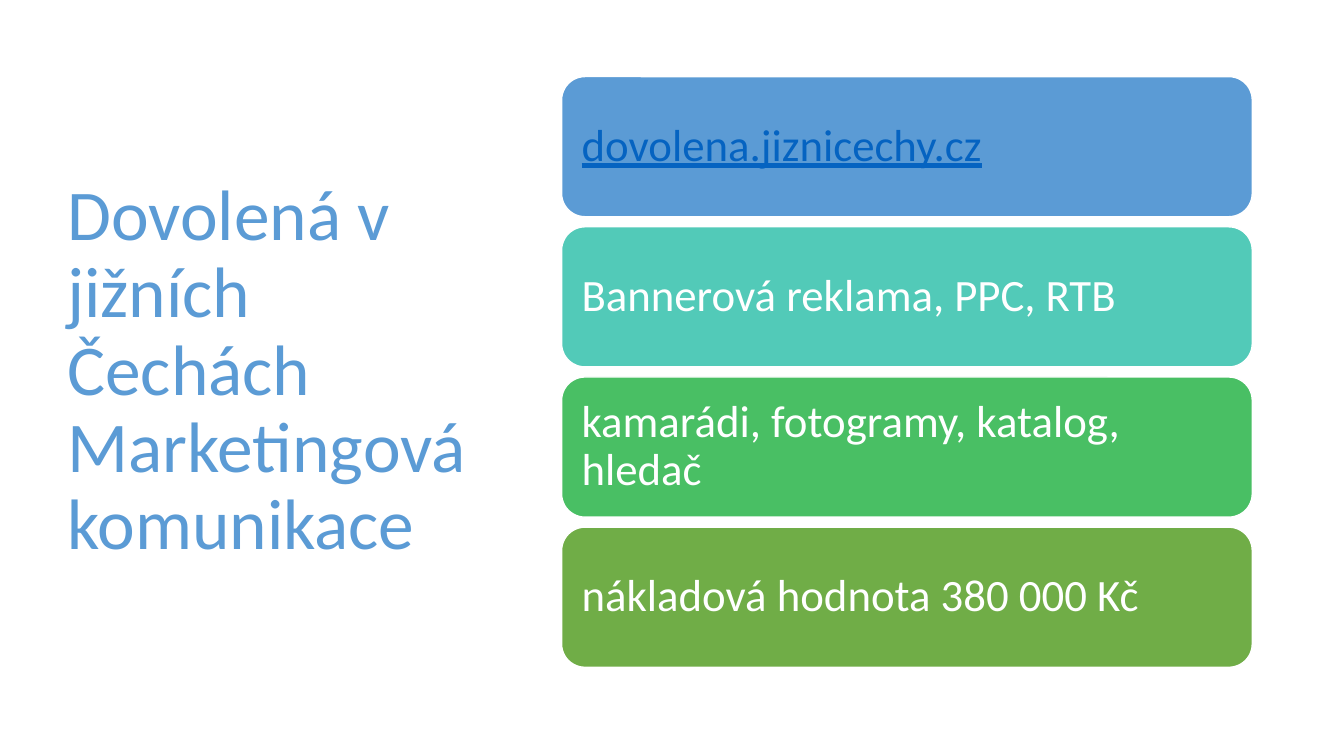
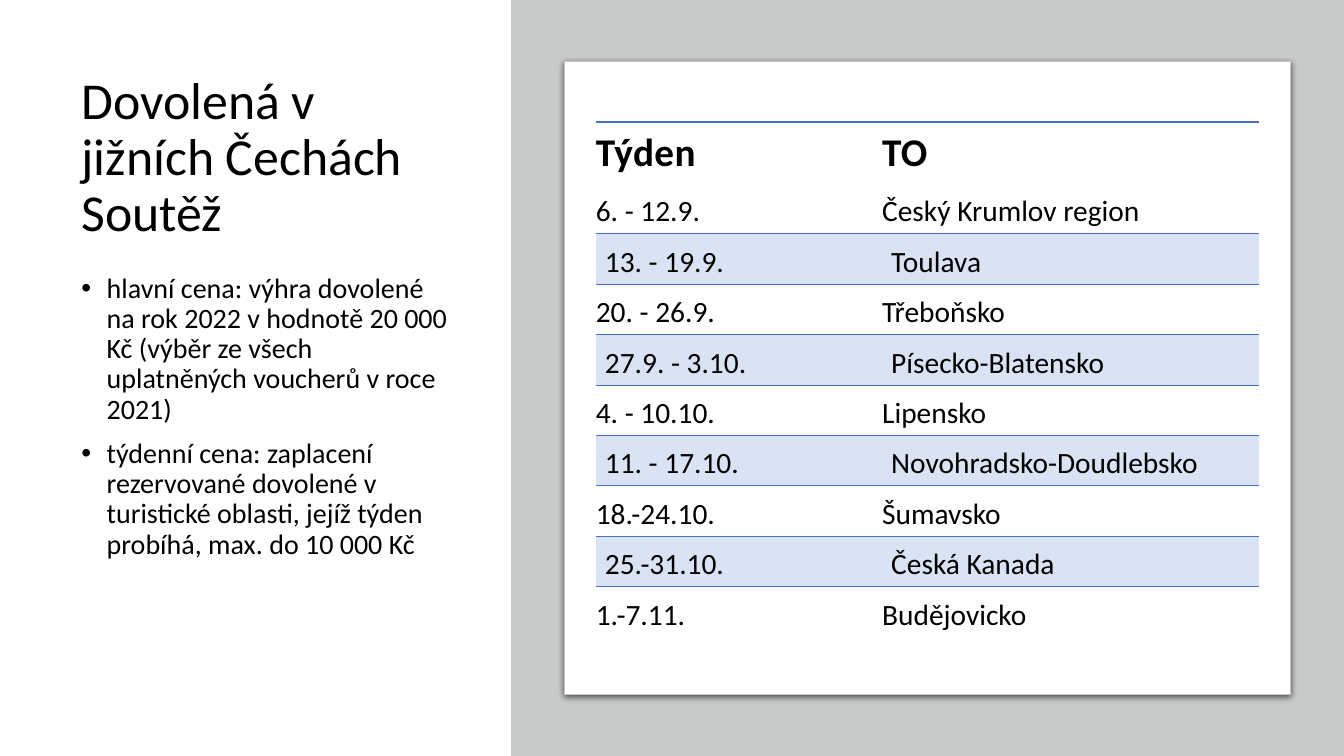
from lxml import etree
from pptx import Presentation
from pptx.dml.color import RGBColor
from pptx.enum.shapes import MSO_SHAPE as SHAPE
from pptx.enum.text import MSO_ANCHOR as ANCHOR, PP_ALIGN as ALIGN
from pptx.oxml.ns import qn
from pptx.util import Inches, Pt

FONT = "Calibri"
BLACK = RGBColor(0x00, 0x00, 0x00)
WHITE = RGBColor(0xFF, 0xFF, 0xFF)
BLUE = RGBColor(0x5B, 0x9B, 0xD5)
TEAL = RGBColor(0x52, 0xCA, 0xB8)
GREEN = RGBColor(0x49, 0xBF, 0x64)
OLIVE = RGBColor(0x70, 0xAD, 0x47)
LINK = RGBColor(0x05, 0x63, 0xC1)
GREY = RGBColor(0xC8, 0xCA, 0xCA)
BAND = RGBColor(0xDA, 0xE3, 0xF3)
RULE = RGBColor(0x44, 0x72, 0xC4)
NO_STYLE = "{2D5ABB26-0587-4C30-8999-92F81FD0307C}"


def write(paragraph, lines, size, color, spacing=0.9):
    paragraph.alignment = ALIGN.LEFT
    paragraph.line_spacing = spacing
    for i, line in enumerate(lines):
        if i:
            paragraph.add_line_break()
        run = paragraph.add_run()
        run.text = line
        run.font.name = FONT
        run.font.size = Pt(size)
        run.font.color.rgb = color
    return run


def add_title(slide, box, lines, size, color):
    frame = slide.shapes.add_textbox(*[Inches(v) for v in box]).text_frame
    frame.word_wrap = True
    frame.vertical_anchor = ANCHOR.MIDDLE
    write(frame.paragraphs[0], lines, size, color)


prs = Presentation()
prs.slide_width = Inches(13.33)
prs.slide_height = Inches(7.5)
blank = prs.slide_layouts[6]

marketing = prs.slides.add_slide(blank)
add_title(marketing, (0.57, 0.68, 4.16, 6.02),
          ["Dovolená v jižních Čechách", "Marketingová komunikace"], 51, BLUE)

channels = [
    ("dovolena.jiznicechy.cz", BLUE, LINK),
    ("Bannerová reklama, PPC, RTB", TEAL, WHITE),
    ("kamarádi, fotogramy, katalog, hledač", GREEN, WHITE),
    ("nákladová hodnota 380 000 Kč", OLIVE, WHITE),
]
for i, (text, fill, color) in enumerate(channels):
    card = marketing.shapes.add_shape(
        SHAPE.ROUNDED_RECTANGLE, Inches(5.57), Inches(0.76 + 1.49 * i), Inches(6.85), Inches(1.39))
    card.shadow.inherit = False
    card.fill.solid()
    card.fill.fore_color.rgb = fill
    card.line.color.rgb = WHITE
    card.line.width = Pt(1)
    frame = card.text_frame
    frame.word_wrap = True
    frame.vertical_anchor = ANCHOR.MIDDLE
    frame.margin_left = frame.margin_right = Inches(0.13)
    run = write(frame.paragraphs[0], [text], 32, color)
    if color == LINK:
        run.font.underline = True

contest = prs.slides.add_slide(blank)
add_title(contest, (0.71, 0.69, 3.83, 1.77),
          ["Dovolená v jižních Čechách", "Soutěž"], 37, BLACK)

prizes = [
    "hlavní cena: výhra dovolené na rok 2022 v hodnotě 20 000 Kč "
    "(výběr ze všech uplatněných voucherů v roce 2021)",
    "týdenní cena: zaplacení rezervované dovolené v turistické oblasti, "
    "jejíž týden probíhá, max. do 10 000 Kč",
]
frame = contest.shapes.add_textbox(Inches(0.71), Inches(2.67), Inches(3.83), Inches(4.14)).text_frame
frame.word_wrap = True
for i, prize in enumerate(prizes):
    paragraph = frame.add_paragraph() if i else frame.paragraphs[0]
    props = paragraph._p.get_or_add_pPr()
    props.set("marL", str(Inches(0.25)))
    props.set("indent", str(Inches(-0.25)))
    etree.SubElement(props, qn("a:buFont"), typeface="Arial")
    etree.SubElement(props, qn("a:buChar"), char="•")
    if i:
        paragraph.space_before = Pt(10)
    write(paragraph, [prize], 20, BLACK)

backdrop = contest.shapes.add_shape(SHAPE.RECTANGLE, Inches(5.07), 0, Inches(8.26), Inches(7.5))
backdrop.shadow.inherit = False
backdrop.fill.solid()
backdrop.fill.fore_color.rgb = GREY
backdrop.line.fill.background()

sheet = contest.shapes.add_shape(SHAPE.RECTANGLE, Inches(5.6), Inches(0.61), Inches(7.2), Inches(6.28))
sheet.fill.solid()
sheet.fill.fore_color.rgb = WHITE
sheet.line.color.rgb = GREY
sheet.line.width = Pt(0.75)
sheet.shadow.inherit = False
effects = sheet._element.spPr.find(qn("a:effectLst"))
shade = etree.SubElement(effects, qn("a:outerShdw"), blurRad=str(Pt(4.5)), dist=str(Pt(1.5)),
                         dir="5400000", algn="t", rotWithShape="0")
shade_color = etree.SubElement(shade, qn("a:srgbClr"), val=str(BLACK))
etree.SubElement(shade_color, qn("a:alpha"), val="63000")

weeks = [
    ("Týden", "TO"),
    ("6. - 12.9.", "Český Krumlov region"),
    ("13. - 19.9.", "Toulava"),
    ("20. - 26.9.", "Třeboňsko"),
    ("27.9. - 3.10.", "Písecko-Blatensko"),
    ("4. - 10.10.", "Lipensko"),
    ("11. - 17.10.", "Novohradsko-Doudlebsko"),
    ("18.-24.10.", "Šumavsko"),
    ("25.-31.10.", "Česká Kanada"),
    ("1.-7.11.", "Budějovicko"),
]
schedule = contest.shapes.add_table(
    len(weeks), 2, Inches(5.91), Inches(1.21), Inches(6.58), Inches(5.07)).table
schedule.first_row = True
schedule.horz_banding = False
schedule._tbl.tblPr.find(qn("a:tableStyleId")).text = NO_STYLE
schedule.columns[0].width = Inches(2.84)
schedule.columns[1].width = Inches(3.74)

for r, week in enumerate(weeks):
    header = r == 0
    banded = r > 0 and r % 2 == 0
    schedule.rows[r].height = Inches(0.61 if header else 0.5)
    for c, text in enumerate(week):
        cell = schedule.cell(r, c)
        cell.margin_left = Inches(0.09 if banded else 0)
        cell.margin_right = Inches(0.02 if header else 0.06)
        cell.margin_top = cell.margin_bottom = Inches(0.04)
        cell.vertical_anchor = ANCHOR.MIDDLE if header else ANCHOR.BOTTOM
        run = write(cell.text_frame.paragraphs[0], [text], 28 if header else 21, BLACK, 1.0)
        run.font.bold = header
        if header:
            run.font._element.set("spc", "30")
        if banded:
            cell.fill.solid()
            cell.fill.fore_color.rgb = BAND
        else:
            cell.fill.background()
        if header or banded:
            border = etree.Element(qn("a:lnT"), w=str(Pt(1.5 if header else 0.75)))
            ink = etree.SubElement(border, qn("a:solidFill"))
            etree.SubElement(ink, qn("a:srgbClr"), val=str(RULE))
            cell._tc.get_or_add_tcPr().insert(0, border)

prs.save("out.pptx")
